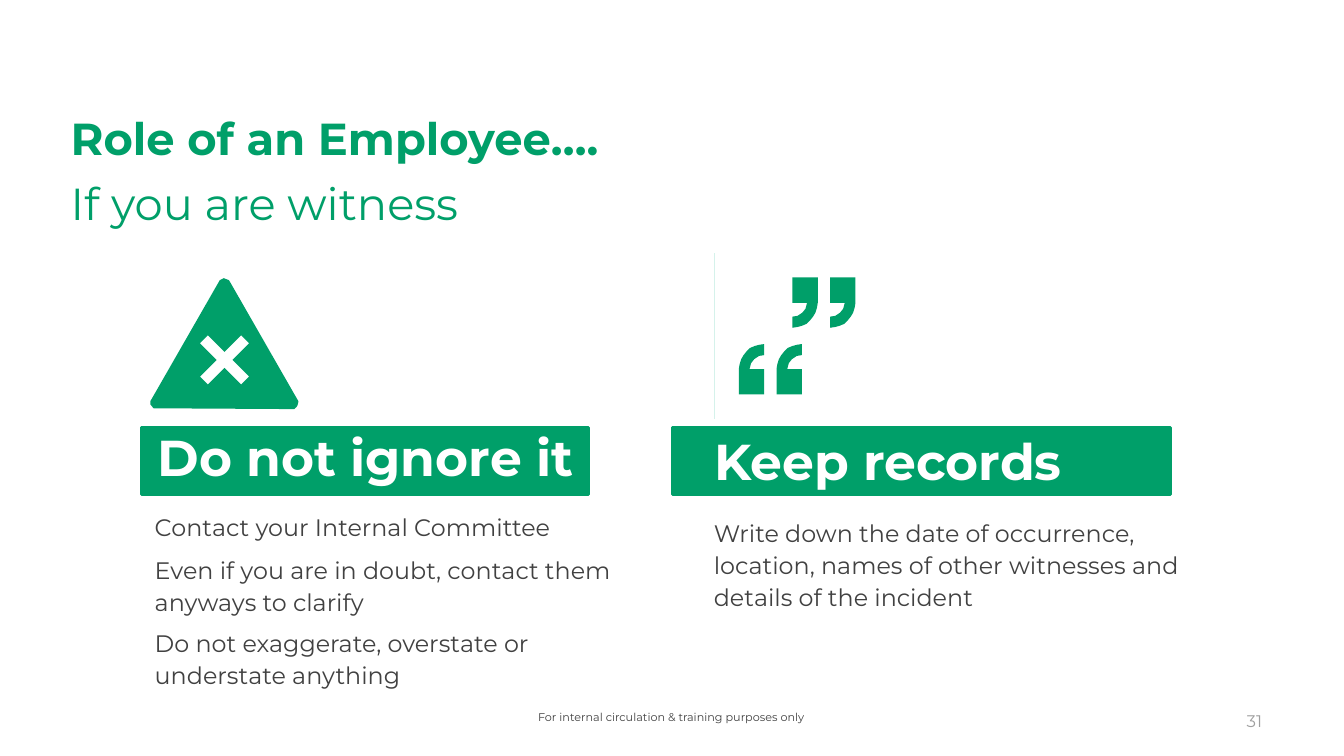
from lxml.etree import SubElement
from pptx import Presentation
from pptx.dml.color import RGBColor
from pptx.enum.shapes import MSO_CONNECTOR, MSO_SHAPE
from pptx.oxml.ns import qn
from pptx.util import Cm, Pt

GREEN = RGBColor(0x00, 0x9F, 0x69)
PALE_GREEN = RGBColor(0xD5, 0xF2, 0xEB)
WHITE = RGBColor(0xFF, 0xFF, 0xFF)
DARK_GREY = RGBColor(0x41, 0x41, 0x41)
LIGHT_GREY = RGBColor(0x9F, 0x9F, 0x9F)

TRIANGLE = [(1.85, 0), (1.75, 0.05), (0.03, 3.05), (0, 3.1), (0, 3.18), (0.08, 3.28),
            (3.56, 3.3), (3.63, 3.3), (3.68, 3.25), (3.71, 3.2), (3.73, 3.12),
            (3.73, 3.1), (2.01, 0.1), (1.98, 0.05), (1.9, 0.02)]
CROSS_CENTRE = (1.87, 2.06)
CROSS = [(-0.62, -0.42), (-0.42, -0.62), (0, -0.2), (0.42, -0.62), (0.62, -0.42),
         (0.2, 0), (0.62, 0.42), (0.42, 0.62), (0, 0.2), (-0.42, 0.62),
         (-0.62, 0.42), (-0.2, 0)]
QUOTE_WIDTH, QUOTE_HEIGHT, QUOTE_STEP = 0.64, 1.27, 0.95
CLOSING_QUOTE = [(0.64, 0), (0, 0), (0, 0.64), (0.37, 0.64), (0.33, 0.79), (0.25, 0.89),
                 (0.13, 0.97), (0, 0.99), (0, 1.27), (0.13, 1.25), (0.24, 1.22),
                 (0.36, 1.17), (0.44, 1.09), (0.52, 0.99), (0.58, 0.89), (0.62, 0.76),
                 (0.64, 0.64)]
OPENING_QUOTE = [(QUOTE_WIDTH - x, QUOTE_HEIGHT - y) for x, y in CLOSING_QUOTE]


def add_text(page, left, top, width, height, lines, size, color, bold=False, inset=0.03):
    """Add a wrapped text box with one paragraph per line and return its paragraphs."""
    box = page.shapes.add_textbox(Cm(left), Cm(top), Cm(width), Cm(height))
    frame = box.text_frame
    frame.word_wrap = True
    frame.margin_left = frame.margin_right = frame.margin_bottom = 0
    frame.margin_top = Cm(inset)
    frame.text = "\n".join(lines)
    for para in frame.paragraphs:
        para.font.name = "Montserrat"
        para.font.size = Pt(size)
        para.font.color.rgb = color
        para.font.bold = bold
    return frame.paragraphs


def add_outline(page, left, top, *contours):
    """Add a green freeform made of closed contours."""
    placed = [[(Cm(left + x), Cm(top + y)) for x, y in contour] for contour in contours]
    builder = page.shapes.build_freeform(*placed[0][0])
    for index, contour in enumerate(placed):
        if index:
            builder.move_to(*contour[0])
        builder.add_line_segments(contour[1:], close=True)
    shape = builder.convert_to_shape()
    shape.shadow.inherit = False
    shape.fill.solid()
    shape.fill.fore_color.rgb = GREEN
    shape.line.fill.background()


def add_title(page, left, top, width, height):
    """Add the bold heading and its lighter second line."""
    lines = ["Role of an Employee….", "If you are witness"]
    heading, subtitle = add_text(page, left, top, width, height, lines, 32, GREEN,
                                 bold=True, inset=0.23)
    heading.line_spacing = subtitle.line_spacing = 1.2
    subtitle.font.bold = False


def add_banner(page, left, top, width, height, label, indent, drop):
    """Add a green bar with a white label."""
    bar = page.shapes.add_shape(MSO_SHAPE.RECTANGLE, Cm(left), Cm(top), Cm(width), Cm(height))
    bar.shadow.inherit = False
    bar.fill.solid()
    bar.fill.fore_color.rgb = GREEN
    bar.line.color.rgb = GREEN
    bar.line.width = Pt(2)
    add_text(page, left + indent, top + drop, width - indent, height, [label], 36, WHITE, bold=True)


def add_warning(page, left, top):
    """Add the warning triangle with a cross cut out of it."""
    centre_x, centre_y = CROSS_CENTRE
    cross = [(centre_x + x, centre_y + y) for x, y in CROSS]
    add_outline(page, left, top, TRIANGLE, cross)


def add_quotes(page, left, top):
    """Add a closing pair of quotation marks above an opening pair."""
    for step in (0, QUOTE_STEP):
        add_outline(page, left + 1.35 + step, top, CLOSING_QUOTE)
        add_outline(page, left + step, top + 1.68, OPENING_QUOTE)


def add_divider(page, left, top, height):
    """Add the thin vertical rule."""
    rule = page.shapes.add_connector(MSO_CONNECTOR.STRAIGHT, Cm(left), Cm(top),
                                     Cm(left), Cm(top + height))
    rule.line.color.rgb = PALE_GREEN
    rule.line.width = Pt(0.5)
    SubElement(rule.line._get_or_add_ln().getparent(), qn("a:effectLst"))


def add_ignore_column(page, left, top):
    """Add the left column on not ignoring an incident."""
    add_warning(page, left + 0.23, top)
    add_banner(page, left, top + 3.76, 11.28, 1.7, "Do not ignore it", 0.41, -0.07)
    advice = add_text(page, left + 0.34, top + 5.69, 11.55, 4.14, [
        "Contact your Internal Committee",
        "Even if you are in doubt, contact them anyways to clarify",
        "Do not exaggerate, overstate or understate anything",
    ], 17, DARK_GREY, inset=0.23)
    for para, space in zip(advice[1:], (7.8, 6.7)):
        para.line_spacing = 1.11
        para.space_before = Pt(space)


def add_records_column(page, left, top):
    """Add the right column on keeping records."""
    add_divider(page, left + 1.07, top - 0.63, 4.17)
    add_quotes(page, left + 1.68, top - 0.02)
    add_banner(page, left, top + 3.76, 12.55, 1.7, "Keep records", 1.07, 0.03)
    advice = add_text(page, left + 1.05, top + 5.89, 11.8, 2.13, [
        "Write down the date of occurrence, location, names of other witnesses "
        "and details of the incident",
    ], 17, DARK_GREY, inset=0.1)
    advice[0].line_spacing = 1.11


def add_footer(page, top):
    """Add the circulation note and the page number."""
    add_text(page, 13.56, top, 7, 0.43,
             ["For internal circulation & training purposes only"], 8, DARK_GREY)
    add_text(page, 31.42, top + 0.02, 0.8, 0.58, ["31"], 12, LIGHT_GREY)


def main():
    """Build the slide and save the deck."""
    deck = Presentation()
    deck.slide_width, deck.slide_height = Cm(33.87), Cm(19.05)
    page = deck.slides.add_slide(deck.slide_layouts[6])
    add_title(page, 1.78, 2.29, 30, 2.97)
    add_ignore_column(page, 3.56, 7.01)
    add_records_column(page, 16.94, 7.01)
    add_footer(page, 17.86)
    deck.save("out.pptx")


if __name__ == "__main__":
    main()
